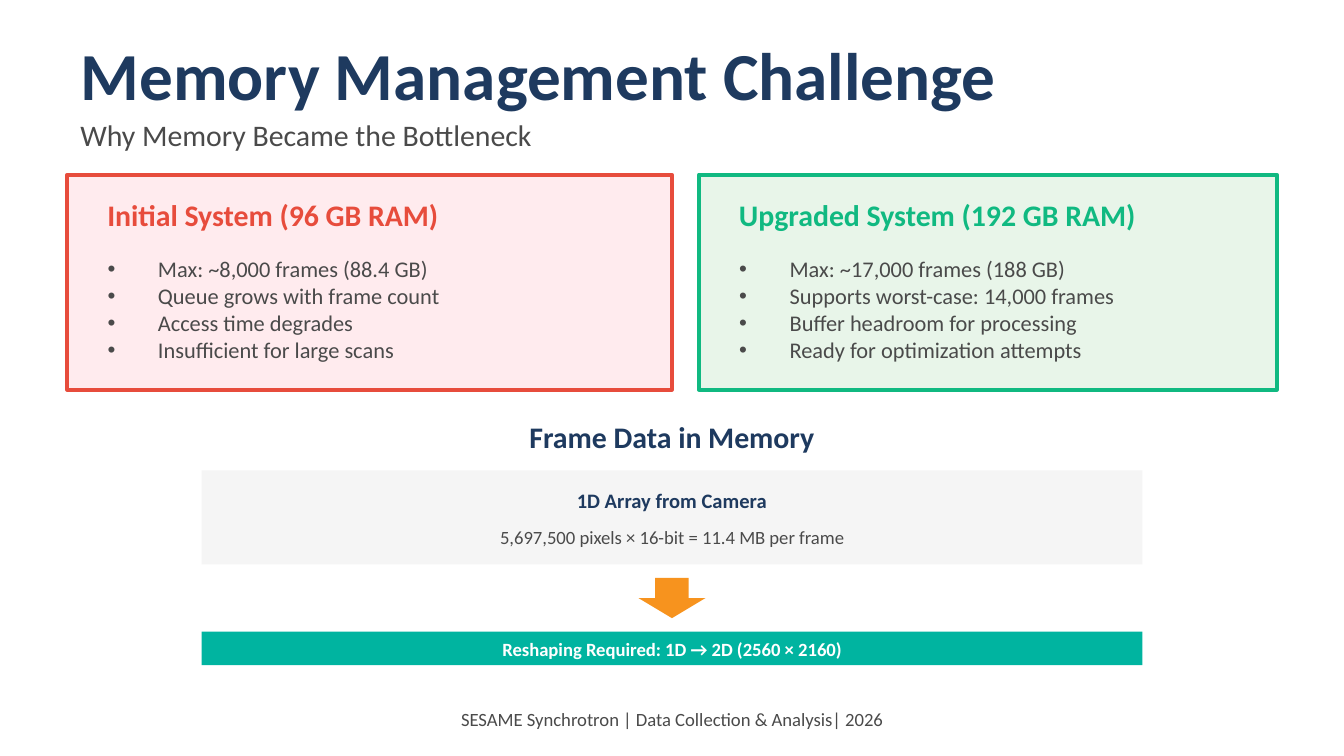
"""Build the Memory Management Challenge slide."""
from dataclasses import dataclass
from typing import NamedTuple

from pptx import Presentation
from pptx.dml.color import RGBColor
from pptx.enum.shapes import MSO_SHAPE
from pptx.enum.text import MSO_ANCHOR, MSO_AUTO_SIZE, PP_ALIGN
from pptx.util import Pt


@dataclass(frozen=True)
class Theme:
    font: str = "Calibri"
    navy: str = "1E3A5F"
    gray: str = "4A4A4A"
    white: str = "FFFFFF"
    panel: str = "F5F5F5"
    orange: str = "F7931E"
    teal: str = "00B4A0"
    red: str = "E74C3C"
    pink: str = "FFEBEE"
    green: str = "10B981"
    mint: str = "E8F5E9"
    title: int = 36
    heading: int = 16
    body: int = 12
    label: int = 11
    small: int = 10
    border: int = 2


class Area(NamedTuple):
    left: float
    top: float
    width: float
    height: float


class Style(NamedTuple):
    size: int
    color: str
    bold: bool = False
    align: PP_ALIGN = PP_ALIGN.CENTER


class Card(NamedTuple):
    left: float
    width: float
    heading: str
    items: tuple
    accent: str
    fill: str


class Caption(NamedTuple):
    text: str
    area: Area
    style: Style


THEME = Theme()
MARGIN, CONTENT = 36, 648
FRAME_LEFT, FRAME_WIDTH = 108, 504
CARD_TOP, CARD_HEIGHT, CARD_INSET = 93.6, 115.2, 14.4

CARDS = (
    Card(MARGIN, 324, "Initial System (96 GB RAM)",
         ("Max: ~8,000 frames (88.4 GB)", "Queue grows with frame count",
          "Access time degrades", "Insufficient for large scans"),
         THEME.red, THEME.pink),
    Card(374.4, 309.6, "Upgraded System (192 GB RAM)",
         ("Max: ~17,000 frames (188 GB)", "Supports worst-case: 14,000 frames",
          "Buffer headroom for processing", "Ready for optimization attempts"),
         THEME.green, THEME.mint),
)

PANELS = (
    (MSO_SHAPE.RECTANGLE, Area(FRAME_LEFT, 252, FRAME_WIDTH, 50.4), THEME.panel),
    (MSO_SHAPE.DOWN_ARROW, Area(342, 309.6, 36, 21.6), THEME.orange),
    (MSO_SHAPE.RECTANGLE, Area(FRAME_LEFT, 338.4, FRAME_WIDTH, 18), THEME.teal),
)

CAPTIONS = (
    Caption("Why Memory Became the Bottleneck", Area(MARGIN, 61.2, CONTENT, 21.6),
            Style(THEME.heading, THEME.gray, align=PP_ALIGN.LEFT)),
    Caption("Frame Data in Memory", Area(MARGIN, 223.2, CONTENT, 21.6),
            Style(THEME.heading, THEME.navy, True)),
    Caption("1D Array from Camera", Area(FRAME_LEFT, 259.2, FRAME_WIDTH, 18),
            Style(THEME.label, THEME.navy, True)),
    Caption("5,697,500 pixels × 16-bit = 11.4 MB per frame",
            Area(FRAME_LEFT, 280.8, FRAME_WIDTH, 14.4), Style(THEME.small, THEME.gray)),
    Caption("Reshaping Required: 1D → 2D (2560 × 2160)",
            Area(FRAME_LEFT, 340.56, FRAME_WIDTH, 14.4),
            Style(THEME.small, THEME.white, True)),
    Caption("SESAME Synchrotron | Data Collection & Analysis| 2026",
            Area(MARGIN, 374.4, CONTENT, 21.6), Style(THEME.small, THEME.gray)),
)


def apply(target, values: dict) -> None:
    """Set every named attribute on the target."""
    for name, value in values.items():
        setattr(target, name, value)


def place(box, area: Area) -> None:
    """Move and size a box, in points."""
    apply(box, {name: Pt(value) for name, value in area._asdict().items()})


def write(box, lines: tuple, style: Style) -> None:
    """Fill a box with one formatted paragraph per line."""
    frame = box.text_frame
    apply(frame, {"text": "\n".join(lines), "word_wrap": True,
                  "auto_size": MSO_AUTO_SIZE.NONE,
                  "vertical_anchor": MSO_ANCHOR.MIDDLE})
    for para in frame.paragraphs:
        apply(para, {"alignment": style.align, "space_before": Pt(0)})
        for span in para.runs:
            apply(span.font, {"name": THEME.font, "size": Pt(style.size),
                              "bold": style.bold})
            span.font.color.rgb = RGBColor.from_string(style.color)


def draw_text(page, caption: Caption) -> None:
    """Add a text box with a single line."""
    box = page.shapes.add_textbox(*map(Pt, caption.area))
    write(box, (caption.text,), caption.style)


def draw_shape(page, kind: MSO_SHAPE, area: Area, fill: str, line: str = "") -> None:
    """Add a flat shape, outlined when a line colour is given."""
    shape = page.shapes.add_shape(kind, *map(Pt, area))
    shape.shadow.inherit = False
    shape.fill.solid()
    shape.fill.fore_color.rgb = RGBColor.from_string(fill)
    if line:
        shape.line.color.rgb = RGBColor.from_string(line)
        shape.line.width = Pt(THEME.border)
    else:
        shape.line.fill.background()


def draw_card(page, card: Card, body) -> None:
    """Draw an outlined card and lay its heading and list over it."""
    draw_shape(page, MSO_SHAPE.RECTANGLE,
               Area(card.left, CARD_TOP, card.width, CARD_HEIGHT), card.fill, card.accent)
    left, width = card.left + CARD_INSET, card.width - 2 * CARD_INSET
    draw_text(page, Caption(card.heading, Area(left, 104.4, width, 21.6),
                            Style(THEME.heading, card.accent, True, PP_ALIGN.LEFT)))
    place(body, Area(left, 133.2, width, 64.8))
    write(body, card.items, Style(THEME.body, THEME.gray, align=PP_ALIGN.LEFT))
    body.element.getparent().append(body.element)


def main() -> None:
    """Assemble the slide and save the deck."""
    deck = Presentation()
    apply(deck, {"slide_width": Pt(720), "slide_height": Pt(405)})
    page = deck.slides.add_slide(deck.slide_layouts.get_by_name("Two Content"))
    title, *bodies = page.placeholders
    place(title, Area(MARGIN, 21.6, CONTENT, 36))
    write(title, ("Memory Management Challenge",),
          Style(THEME.title, THEME.navy, True, PP_ALIGN.LEFT))
    for card, body in zip(CARDS, bodies):
        draw_card(page, card, body)
    for kind, area, fill in PANELS:
        draw_shape(page, kind, area, fill)
    for caption in CAPTIONS:
        draw_text(page, caption)
    deck.save("out.pptx")


if __name__ == "__main__":
    main()
